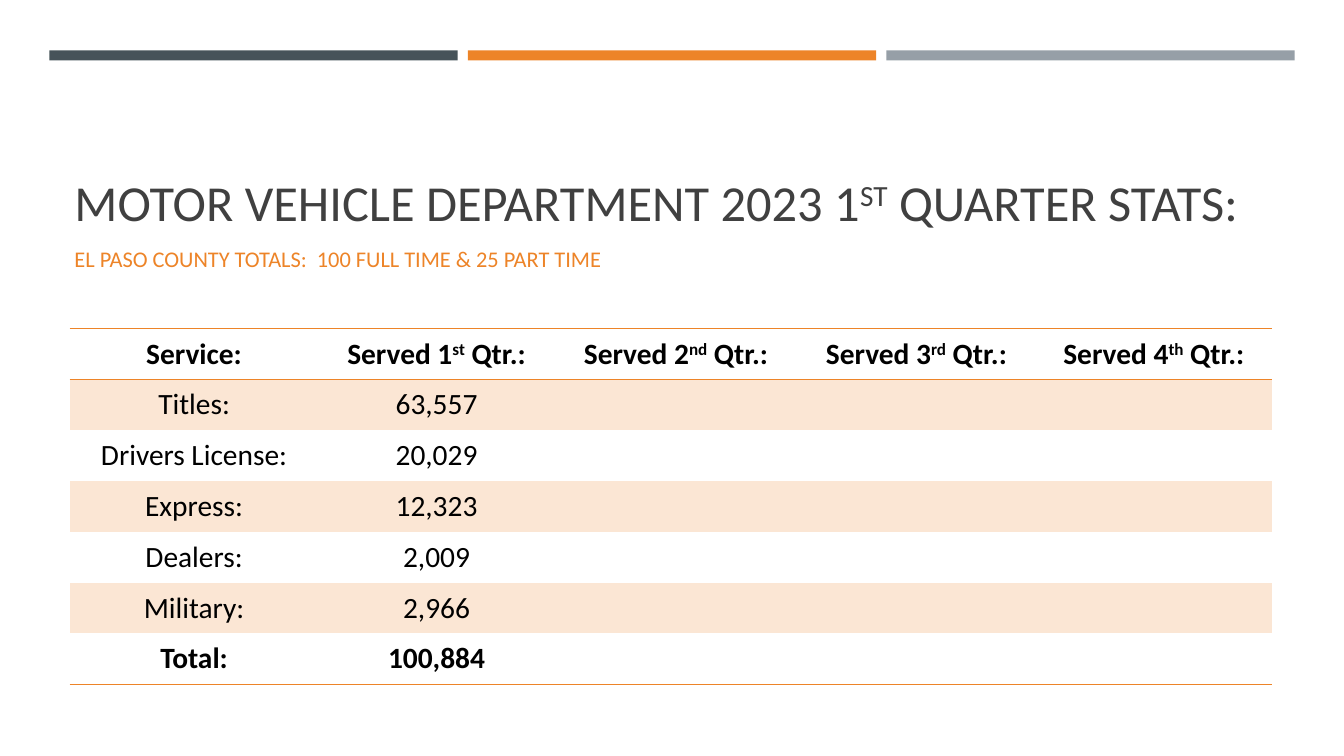
from lxml import etree
from pptx import Presentation
from pptx.dml.color import RGBColor
from pptx.enum.shapes import MSO_SHAPE
from pptx.enum.text import MSO_ANCHOR, PP_ALIGN
from pptx.oxml.ns import qn
from pptx.util import Inches, Pt

SLATE = RGBColor(0x46, 0x53, 0x59)
ORANGE = RGBColor(0xED, 0x84, 0x28)
GREY = RGBColor(0x96, 0x9F, 0xA7)
PALE_ORANGE = RGBColor(0xFB, 0xE6, 0xD4)
TITLE_GREY = RGBColor(0x40, 0x40, 0x40)
BLACK = RGBColor(0, 0, 0)
RECTANGLE = MSO_SHAPE.RECTANGLE
TOP, MIDDLE, BOTTOM = MSO_ANCHOR.TOP, MSO_ANCHOR.MIDDLE, MSO_ANCHOR.BOTTOM
CENTER = PP_ALIGN.CENTER
PLAIN_TABLE_STYLE = "{2D5ABB26-0587-4C30-8999-92F81FD0307C}"


def write_text(frame, parts, size, color, bold=False):
    """Fill the first paragraph; every second part is superscript."""
    paragraph = frame.paragraphs[0]
    paragraph.font.name = "Calibri"
    paragraph.font.size = Pt(size)
    paragraph.font.color.rgb = color
    paragraph.font.bold = bold
    for index, part in enumerate(parts):
        run = paragraph.add_run()
        run.text = part
        if index % 2:
            run.font._element.set("baseline", "30000")
    return paragraph


def add_border(cell, sides):
    """Draw a 1 pt orange line on the given sides (lnT, lnB)."""
    properties = cell._tc.get_or_add_tcPr()
    for position, side in enumerate(sides):
        line = etree.Element(qn(f"a:{side}"), w=str(Pt(1)))
        fill = etree.SubElement(line, qn("a:solidFill"))
        etree.SubElement(fill, qn("a:srgbClr"), val=str(ORANGE))
        properties.insert(position, line)


prs = Presentation()
prs.slide_width = Inches(13.33)
prs.slide_height = Inches(7.5)
slide = prs.slides.add_slide(prs.slide_layouts[6])

# Title and subtitle
headings = [
    (0.79, 1.56, BOTTOM, 36, TITLE_GREY,
     ["MOTOR VEHICLE DEPARTMENT 2023 1", "ST", " QUARTER STATS:"]),
    (2.38, 0.57, TOP, 16, ORANGE,
     ["EL PASO COUNTY TOTALS:  100 FULL TIME & 25 PART TIME"]),
]
for top, height, anchor, size, color, parts in headings:
    heading = slide.shapes.add_textbox(
        Inches(0.64), Inches(top), Inches(12.02), Inches(height))
    heading.text_frame.word_wrap = True
    heading.text_frame.vertical_anchor = anchor
    write_text(heading.text_frame, parts, size, color)

# Three bars across the top
for index, color in enumerate([SLATE, ORANGE, GREY]):
    bar = slide.shapes.add_shape(
        RECTANGLE, Inches(0.49 + 4.15 * index), Inches(0.5), Inches(4.05), Inches(0.1))
    bar.shadow.inherit = False
    bar.fill.solid()
    bar.fill.fore_color.rgb = color
    bar.line.fill.background()

# Quarterly table
quarters = [["Served 1", "st"], ["Served 2", "nd"], ["Served 3", "rd"], ["Served 4", "th"]]
header = [["Service:"]] + [quarter + [" Qtr.:"] for quarter in quarters]
services = [
    ("Titles:", "63,557"),
    ("Drivers License:", "20,029"),
    ("Express:", "12,323"),
    ("Dealers:", "2,009"),
    ("Military:", "2,966"),
    ("Total:", "100,884"),
]
rows = [header] + [[[name], [served], [], [], []] for name, served in services]
last_row = len(rows) - 1

stats = slide.shapes.add_table(
    len(rows), len(header), Inches(0.69), Inches(3.26), Inches(11.94), Inches(3.53)).table
stats._tbl.tblPr.find(qn("a:tableStyleId")).text = PLAIN_TABLE_STYLE
stats.horz_banding = False
for column, width in zip(stats.columns, [2.47, 2.34, 2.41, 2.36, 2.35]):
    column.width = Inches(width)

for row_index, row in enumerate(rows):
    for column_index, parts in enumerate(row):
        cell = stats.cell(row_index, column_index)
        cell.vertical_anchor = MIDDLE
        cell.margin_left = cell.margin_right = Inches(0.11)
        cell.margin_top = cell.margin_bottom = Inches(0.06)
        bold = row_index in (0, last_row)
        write_text(cell.text_frame, parts, 21, BLACK, bold).alignment = CENTER
        if row_index % 2:
            cell.fill.solid()
            cell.fill.fore_color.rgb = PALE_ORANGE
        else:
            cell.fill.background()
        if row_index == 0:
            add_border(cell, ["lnT", "lnB"])
        elif row_index == last_row:
            add_border(cell, ["lnB"])

prs.save("out.pptx")
